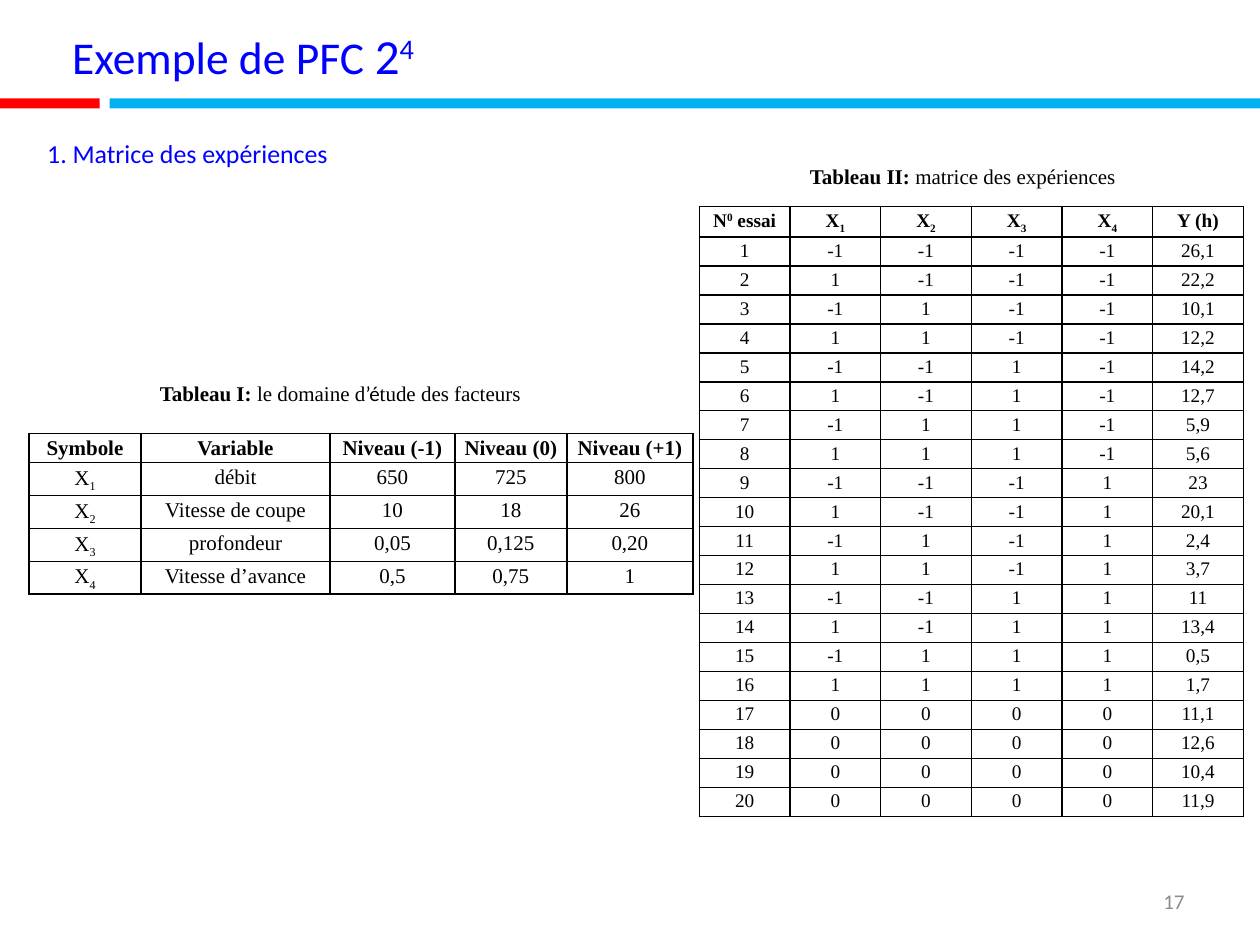
from lxml import etree
from pptx import Presentation
from pptx.dml.color import RGBColor
from pptx.enum.shapes import MSO_SHAPE
from pptx.enum.text import MSO_ANCHOR, PP_ALIGN
from pptx.oxml.ns import qn
from pptx.util import Inches, Pt

BLACK = RGBColor(0x00, 0x00, 0x00)
BLUE = RGBColor(0x00, 0x00, 0xFF)
SKY = RGBColor(0x00, 0xB0, 0xF0)
RED = RGBColor(0xFF, 0x00, 0x00)
GRAY = RGBColor(0x8C, 0x8C, 0x8C)

LEFT, CENTER, RIGHT = PP_ALIGN.LEFT, PP_ALIGN.CENTER, PP_ALIGN.RIGHT
MIDDLE = MSO_ANCHOR.MIDDLE
RECTANGLE = MSO_SHAPE.RECTANGLE
SERIF, SANS = "Times New Roman", "Calibri"
SUPERSCRIPT, SUBSCRIPT = 30, -25

FACTOR_WIDTHS = [0.89, 1.5, 0.99, 0.89, 1]
FACTOR_HEADERS = ["Symbole", "Variable", "Niveau (-1)", "Niveau (0)", "Niveau (+1)"]
FACTORS = [
    ["débit", "650", "725", "800"],
    ["Vitesse de coupe", "10", "18", "26"],
    ["profondeur", "0,05", "0,125", "0,20"],
    ["Vitesse d’avance", "0,5", "0,75", "1"],
]
FACTOR_COUNT = len(FACTORS)
RESPONSES = (
    "26,1 22,2 10,1 12,2 14,2 12,7 5,9 5,6 23 20,1 "
    "2,4 3,7 11 13,4 0,5 1,7 11,1 12,6 10,4 11,9"
).split()


def add_runs(paragraph, runs, **base_format):
    """Add runs given as plain strings or as (text, format) pairs."""
    for item in runs:
        text, own_format = (item, {}) if isinstance(item, str) else item
        values = {**base_format, **own_format}
        run = paragraph.add_run()
        run.text = text
        run.font.color.rgb = values.pop("color")
        baseline = values.pop("baseline", 0)
        if baseline:
            run._r.get_or_add_rPr().set("baseline", str(baseline * 1000))
        for name, value in values.items():
            setattr(run.font, name, value)


def fill_text(shape, box, runs, align=LEFT, wrap=True, **base_format):
    shape.left, shape.top, shape.width, shape.height = map(Inches, box)
    frame = shape.text_frame
    frame.word_wrap = wrap
    frame.vertical_anchor = MIDDLE
    paragraph = frame.paragraphs[0]
    paragraph.alignment = align
    add_runs(paragraph, runs, **base_format)


def add_text(slide, box, runs, **options):
    shape = slide.shapes.add_textbox(*map(Inches, box))
    fill_text(shape, box, runs, **options)


def add_caption(slide, box, label, *runs):
    add_text(slide, box, [(label, {"bold": True}), *runs], wrap=False,
             name=SERIF, size=Pt(12), color=BLACK)


def add_bar(slide, left, width, color):
    bar = slide.shapes.add_shape(
        RECTANGLE, Inches(left), Inches(0.78), Inches(width), Inches(0.08))
    bar.shadow.inherit = False
    bar.fill.solid()
    bar.fill.fore_color.rgb = color
    bar.line.fill.background()


def set_borders(cell):
    properties = cell._tc.get_or_add_tcPr()
    for index, side in enumerate(("a:lnL", "a:lnR", "a:lnT", "a:lnB")):
        line = etree.Element(qn(side), w=str(Pt(1)))
        fill = etree.SubElement(line, qn("a:solidFill"))
        etree.SubElement(fill, qn("a:srgbClr"), val=str(BLACK))
        properties.insert(index, line)


def add_grid(slide, left, top, widths, row_height, rows, size, margin, space_after=0):
    """Add a ruled table whose first row is bold; each cell is a list of runs."""
    frame = slide.shapes.add_table(
        len(rows), len(widths), Inches(left), Inches(top),
        Inches(sum(widths)), Inches(row_height * len(rows)))
    table = frame.table
    table.first_row = table.horz_banding = False
    for column, width in zip(table.columns, widths):
        column.width = Inches(width)
    cell_format = {"margin_left": Inches(margin), "margin_right": Inches(margin),
                   "margin_top": 0, "margin_bottom": 0}
    paragraph_format = {"alignment": CENTER, "line_spacing": 1.15,
                        "space_after": Pt(space_after)}
    for row_index, row in enumerate(rows):
        table.rows[row_index].height = Inches(row_height)
        for column_index, runs in enumerate(row):
            cell = table.cell(row_index, column_index)
            for name, value in cell_format.items():
                setattr(cell, name, value)
            cell.fill.background()
            set_borders(cell)
            paragraph = cell.text_frame.paragraphs[0]
            for name, value in paragraph_format.items():
                setattr(paragraph, name, value)
            add_runs(paragraph, runs, name=SERIF, size=Pt(size), color=BLACK,
                     bold=row_index == 0)


def factor_symbol(number):
    return ["X", (str(number), {"baseline": SUBSCRIPT})]


def factor_rows():
    rows = [[[header] for header in FACTOR_HEADERS]]
    for number, values in enumerate(FACTORS, start=1):
        rows.append([factor_symbol(number)] + [[value] for value in values])
    return rows


def trial_levels(trial):
    """Levels of a two-level full factorial plan, then of its centre points."""
    if trial >= 2 ** FACTOR_COUNT:
        return ["0"] * FACTOR_COUNT
    return ["1" if trial >> factor & 1 else "-1" for factor in range(FACTOR_COUNT)]


def trial_rows():
    symbols = [factor_symbol(number) for number in range(1, FACTOR_COUNT + 1)]
    rows = [[["N", ("0", {"baseline": SUPERSCRIPT}), " essai"], *symbols, ["Y (h)"]]]
    for trial, response in enumerate(RESPONSES):
        values = [str(trial + 1), *trial_levels(trial), response]
        rows.append([[value] for value in values])
    return rows


def main():
    presentation = Presentation()
    presentation.slide_width, presentation.slide_height = Inches(10), Inches(7.5)
    slide = presentation.slides.add_slide(presentation.slide_layouts[5])

    fill_text(slide.shapes.title, (0.39, 0.16, 4.45, 0.55),
              [" Exemple de PFC ", ("2", {"size": Pt(28)}),
               ("4", {"size": Pt(28), "baseline": SUPERSCRIPT})],
              name=SANS, size=Pt(26), color=BLUE)
    add_bar(slide, 0.87, 9.13, SKY)
    add_bar(slide, 0, 0.79, RED)
    add_text(slide, (0.23, 0.94, 2.58, 0.55), [" 1. Matrice des expériences"],
             wrap=False, name=SANS, size=Pt(14.8), color=BLUE)

    add_caption(slide, (1.17, 2.97, 3.2, 0.3), "Tableau I: ", "le domaine d",
                ("’é", {"name": SANS}), "tude des facteurs")
    add_grid(slide, 0.23, 3.44, FACTOR_WIDTHS, 0.23, factor_rows(),
             size=12, margin=0.07, space_after=10)

    add_caption(slide, (6.33, 1.25, 2.97, 0.3), "Tableau II: ",
                "matrice des expériences")
    add_grid(slide, 5.55, 1.64, [0.72] * (FACTOR_COUNT + 2), 0.23, trial_rows(),
             size=11, margin=0.06)

    add_text(slide, (7.17, 6.95, 2.33, 0.4), ["17"], align=RIGHT,
             name=SANS, size=Pt(12), color=GRAY)
    presentation.save("out.pptx")


if __name__ == "__main__":
    main()
